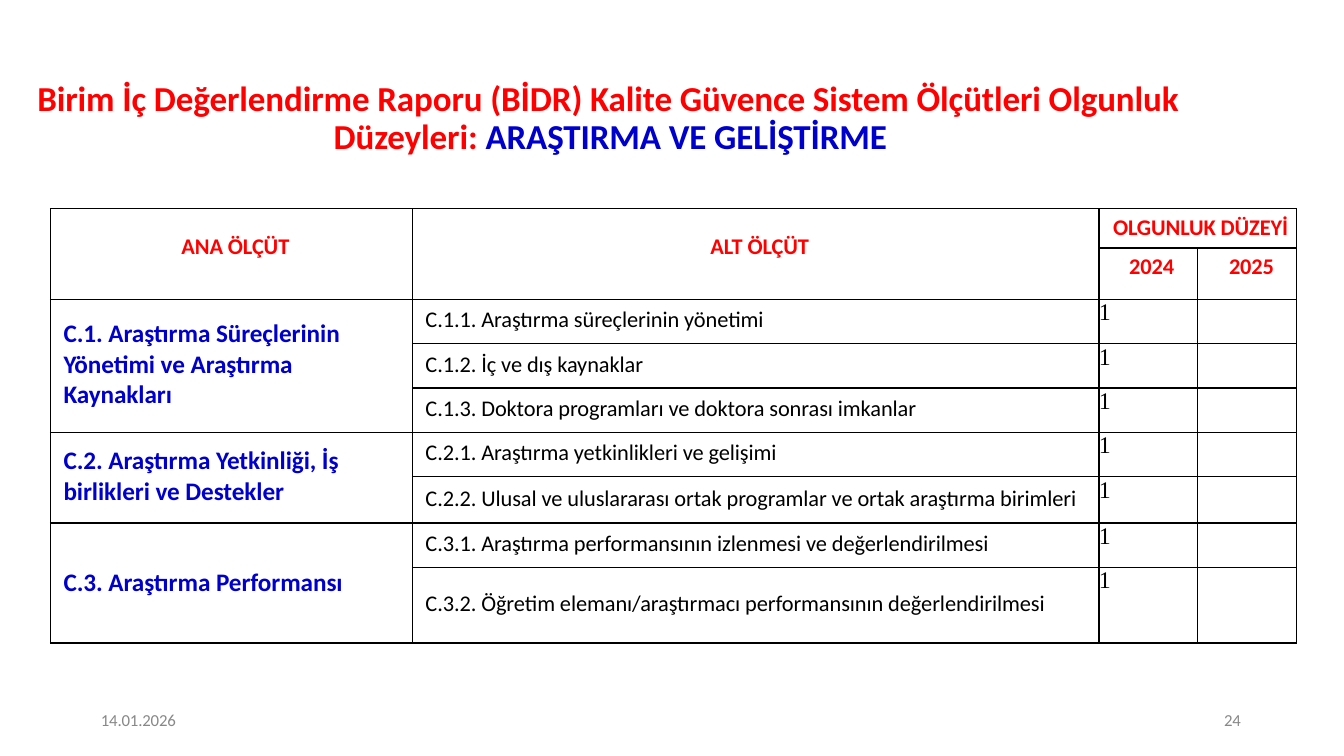
"""Build the slide of research and development maturity levels."""
from dataclasses import dataclass

from lxml import etree
from pptx import Presentation
from pptx.dml.color import RGBColor
from pptx.enum.text import MSO_ANCHOR, MSO_AUTO_SIZE, PP_ALIGN
from pptx.oxml.ns import qn
from pptx.util import Inches, Pt

TOP = MSO_ANCHOR.TOP
NO_FIT = MSO_AUTO_SIZE.NONE
LEFT, CENTER = PP_ALIGN.LEFT, PP_ALIGN.CENTER


@dataclass(frozen=True)
class Style:
    size: float
    color: str
    bold: bool = False
    name: str = "Calibri"
    tracking: int = -5


@dataclass(frozen=True)
class Theme:
    title: Style = Style(25, "FF0000", True)
    topic: Style = Style(25, "0000CC", True)
    header: Style = Style(16, "FF0000", True)
    criterion: Style = Style(18, "0000CC", True)
    item: Style = Style(16, "000000")
    score: Style = Style(17, "000000", name="Times New Roman", tracking=0)
    footer: Style = Style(12, "888888", tracking=-10)
    border: str = "000000"


@dataclass(frozen=True)
class Entry:
    row: int
    column: int
    lines: tuple[str, ...]
    style: Style
    top: float
    left: float = 0.13
    rows: int = 1
    columns: int = 1
    align: PP_ALIGN = LEFT


@dataclass(frozen=True)
class Criterion:
    lines: tuple[str, ...]
    top: float
    items: tuple[tuple[str, float], ...]


@dataclass(frozen=True)
class Footer:
    text: str
    left: float
    width: float
    inset: float


THEME = Theme()
COLUMN_WIDTHS = (3.59, 6.81, 0.98, 0.98)
ROW_HEIGHTS = (0.39, 0.51, 0.44, 0.44, 0.44, 0.44, 0.46, 0.44, 0.75)
HEADERS = (
    Entry(0, 0, ("ANA ÖLÇÜT",), THEME.header, 0.24, 0.08, rows=2, align=CENTER),
    Entry(0, 1, ("ALT ÖLÇÜT",), THEME.header, 0.24, 0.08, rows=2, align=CENTER),
    Entry(0, 2, ("OLGUNLUK DÜZEYİ",), THEME.header, 0.05, 0.14, columns=2),
    Entry(1, 2, ("2024",), THEME.header, 0.05, 0.3),
    Entry(1, 3, ("2025",), THEME.header, 0.05, 0.31),
)
CRITERIA = (
    Criterion(("C.1. Araştırma Süreçlerinin Yönetimi ve Araştırma", "Kaynakları"), 0.19, (
        ("C.1.1. Araştırma süreçlerinin yönetimi", 0.07),
        ("C.1.2. İç ve dış kaynaklar", 0.07),
        ("C.1.3. Doktora programları ve doktora sonrası imkanlar", 0.07),
    )),
    Criterion(("C.2. Araştırma Yetkinliği, İş birlikleri ve Destekler",), 0.13, (
        ("C.2.1. Araştırma yetkinlikleri ve gelişimi", 0.07),
        ("C.2.2. Ulusal ve uluslararası ortak programlar ve ortak araştırma birimleri", 0.08),
    )),
    Criterion(("C.3. Araştırma Performansı",), 0.44, (
        ("C.3.1. Araştırma performansının izlenmesi ve değerlendirilmesi", 0.07),
        ("C.3.2. Öğretim elemanı/araştırmacı performansının değerlendirilmesi", 0.23),
    )),
)
FOOTERS = (Footer("14.01.2026", 1, 0.79, 0), Footer("24", 12.1, 0.27, 0.04))


def set_all(target, values: dict) -> None:
    """Set every named attribute on the target."""
    for name, value in values.items():
        setattr(target, name, value)


def insets(left: float = 0, top: float = 0) -> dict:
    """Return margins with no room on the right and bottom."""
    return {"margin_left": Inches(left), "margin_top": Inches(top),
            "margin_right": 0, "margin_bottom": 0}


def add_span(para, text: str, style: Style) -> None:
    """Add one styled run to a paragraph."""
    span = para.add_run()
    span.text = text
    set_all(span.font, {"size": Pt(style.size), "bold": style.bold, "name": style.name})
    span.font.color.rgb = RGBColor.from_string(style.color)
    span.font._element.set("spc", str(style.tracking))


def add_title(page) -> None:
    """Fill the title placeholder with a hanging two-colour heading."""
    box = page.shapes.title
    set_all(box, {"left": Inches(0.36), "top": Inches(0.54),
                  "width": Inches(11.42), "height": Inches(1.17)})
    set_all(box.text_frame, insets(top=0.26) | {
        "word_wrap": True, "auto_size": NO_FIT, "vertical_anchor": TOP})
    para = box.text_frame.paragraphs[0]
    set_all(para, {"alignment": LEFT, "line_spacing": Pt(27), "space_before": Pt(0)})
    properties = para._p.get_or_add_pPr()
    properties.set("marL", str(Inches(2.95)))
    properties.set("indent", str(Inches(-2.94)))
    add_span(para, "Birim İç Değerlendirme Raporu (BİDR) Kalite Güvence Sistem "
                   "Ölçütleri Olgunluk Düzeyleri: ", THEME.title)
    add_span(para, "ARAŞTIRMA VE GELİŞTİRME", THEME.topic)


def add_footer(page, footer: Footer) -> None:
    """Add one small grey footer text."""
    box = page.shapes.add_textbox(Inches(footer.left), Inches(7.07),
                                  Inches(footer.width), Inches(0.2))
    set_all(box.text_frame, insets(footer.inset) | {"word_wrap": True})
    para = box.text_frame.paragraphs[0]
    para.line_spacing = Pt(12.4)
    add_span(para, footer.text, THEME.footer)


def frame_cell(cell) -> None:
    """Give a cell thin borders and no fill."""
    properties = cell._tc.get_or_add_tcPr()
    for side in ("lnL", "lnR", "lnT", "lnB"):
        line = etree.SubElement(properties, qn(f"a:{side}"), w=str(Pt(1)))
        fill = etree.SubElement(line, qn("a:solidFill"))
        etree.SubElement(fill, qn("a:srgbClr"), val=THEME.border)
    cell.fill.background()


def table_entries() -> list[Entry]:
    """List the header, criterion, item and score cells."""
    entries, row = list(HEADERS), 2
    for criterion in CRITERIA:
        entries.append(Entry(row, 0, criterion.lines, THEME.criterion,
                             criterion.top, rows=len(criterion.items)))
        for text, top in criterion.items:
            entries.append(Entry(row, 1, (text,), THEME.item, top))
            entries.append(Entry(row, 2, ("1",), THEME.score, 0, 0))
            row += 1
    return entries


def fill_entry(table, entry: Entry) -> None:
    """Merge the cells of an entry and write its lines."""
    cell = table.cell(entry.row, entry.column)
    if entry.rows * entry.columns > 1:
        cell.merge(table.cell(entry.row + entry.rows - 1, entry.column + entry.columns - 1))
    set_all(cell, insets(entry.left, entry.top))
    for index, text in enumerate(entry.lines):
        para = cell.text_frame.add_paragraph() if index else cell.text_frame.paragraphs[0]
        para.alignment = entry.align
        add_span(para, text, entry.style)


def add_maturity_table(page) -> None:
    """Add the table of criteria and scores."""
    table = page.shapes.add_table(len(ROW_HEIGHTS), len(COLUMN_WIDTHS), Inches(0.5), Inches(2.07),
                                  Inches(sum(COLUMN_WIDTHS)), Inches(sum(ROW_HEIGHTS))).table
    set_all(table, {"first_row": False, "horz_banding": False})
    for column, width in zip(table.columns, COLUMN_WIDTHS):
        column.width = Inches(width)
    for row, height in zip(table.rows, ROW_HEIGHTS):
        row.height = Inches(height)
    for cell in table.iter_cells():
        frame_cell(cell)
    for entry in table_entries():
        fill_entry(table, entry)


def main() -> None:
    """Build and save the deck."""
    deck = Presentation()
    set_all(deck, {"slide_width": Inches(13.33), "slide_height": Inches(7.5)})
    page = deck.slides.add_slide(deck.slide_layouts[5])
    add_title(page)
    for footer in FOOTERS:
        add_footer(page, footer)
    add_maturity_table(page)
    deck.save("out.pptx")


if __name__ == "__main__":
    main()
